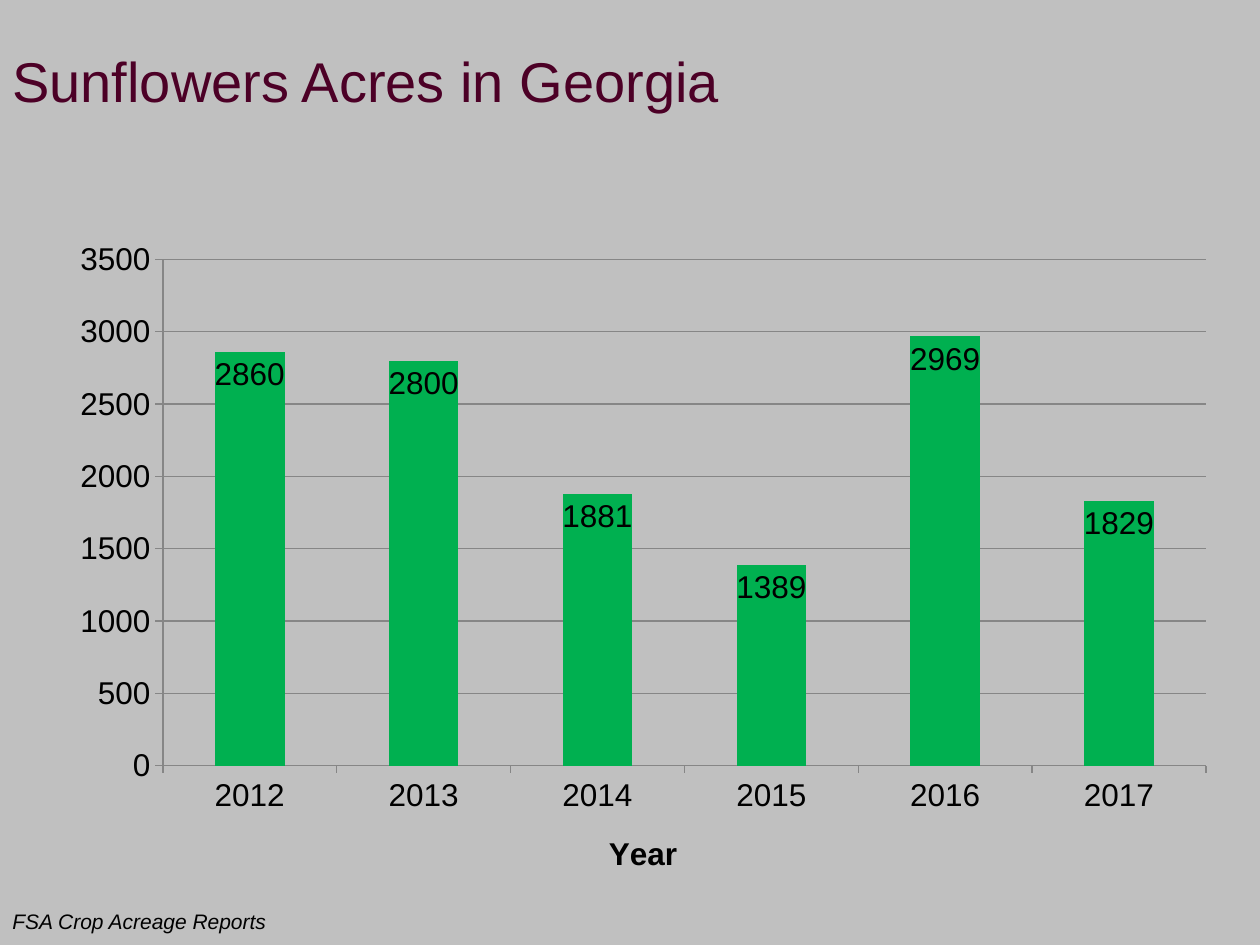
from pptx import Presentation
from pptx.chart.data import CategoryChartData
from pptx.dml.color import RGBColor
from pptx.enum import chart as charts, text
from pptx.util import Pt

COLORS = {
    "background": "C0C0C0",
    "title": "4C0026",
    "text": "000000",
    "bar": "00B050",
    "line": "868686",
}
ACRES = {"2012": 2860, "2013": 2800, "2014": 1881,
         "2015": 1389, "2016": 2969, "2017": 1829}


def color(name):
    return RGBColor.from_string(COLORS[name])


def style_font(font, size, fill="text", bold=False, italic=False):
    font.name = "Arial"
    font.size = Pt(size)
    font.bold = bold
    font.italic = italic
    font.color.rgb = color(fill)


def style_line(line):
    line.color.rgb = color("line")
    line.width = Pt(0.75)


def add_text(page, content, left, top, width, height, wrap=True,
             anchor=text.MSO_ANCHOR.TOP, **style):
    box = page.shapes.add_textbox(Pt(left), Pt(top), Pt(width), Pt(height))
    frame = box.text_frame
    frame.word_wrap = wrap
    frame.vertical_anchor = anchor
    span = frame.paragraphs[0].add_run()
    span.text = content
    style_font(span.font, **style)


def add_acreage_chart(page, left, top, width, height):
    data = CategoryChartData()
    data.categories = list(ACRES)
    data.add_series("Series 1", list(ACRES.values()))
    chart = page.shapes.add_chart(
        charts.XL_CHART_TYPE.COLUMN_CLUSTERED,
        Pt(left), Pt(top), Pt(width), Pt(height), data).chart
    style_font(chart.font, 18)
    chart.has_title = False
    chart.has_legend = False

    for axis in (chart.category_axis, chart.value_axis):
        axis.major_tick_mark = charts.XL_TICK_MARK.OUTSIDE
        style_line(axis.format.line)
    chart.category_axis.has_major_gridlines = False
    chart.value_axis.minimum_scale = 0
    chart.value_axis.maximum_scale = 3500
    chart.value_axis.major_unit = 500
    style_line(chart.value_axis.major_gridlines.format.line)

    para = chart.category_axis.axis_title.text_frame.paragraphs[0]
    span = para.add_run()
    span.text = "Year"
    style_font(span.font, 18, bold=True)

    plot = chart.plots[0]
    plot.gap_width = 150
    plot.vary_by_categories = False
    bars = plot.series[0].format.fill
    bars.solid()
    bars.fore_color.rgb = color("bar")
    plot.has_data_labels = True
    labels = plot.data_labels
    labels.show_value = True
    labels.position = charts.XL_LABEL_POSITION.INSIDE_END
    style_font(labels.font, 18)


def build_page(deck):
    page = deck.slides.add_slide(deck.slide_layouts[6])
    backdrop = page.background.fill
    backdrop.solid()
    backdrop.fore_color.rgb = color("background")
    add_text(page, "Sunflowers Acres in Georgia", 0, 0, 584, 91.5,
             anchor=text.MSO_ANCHOR.MIDDLE, size=32, fill="title")
    add_acreage_chart(page, 32.5, 130.5, 670, 385)
    add_text(page, "FSA Crop Acreage Reports", 0, 515.5, 160.5, 21.8,
             wrap=False, size=12, italic=True)


def main():
    deck = Presentation()
    deck.slide_width, deck.slide_height = Pt(720), Pt(540)
    build_page(deck)
    deck.save("out.pptx")


if __name__ == "__main__":
    main()
